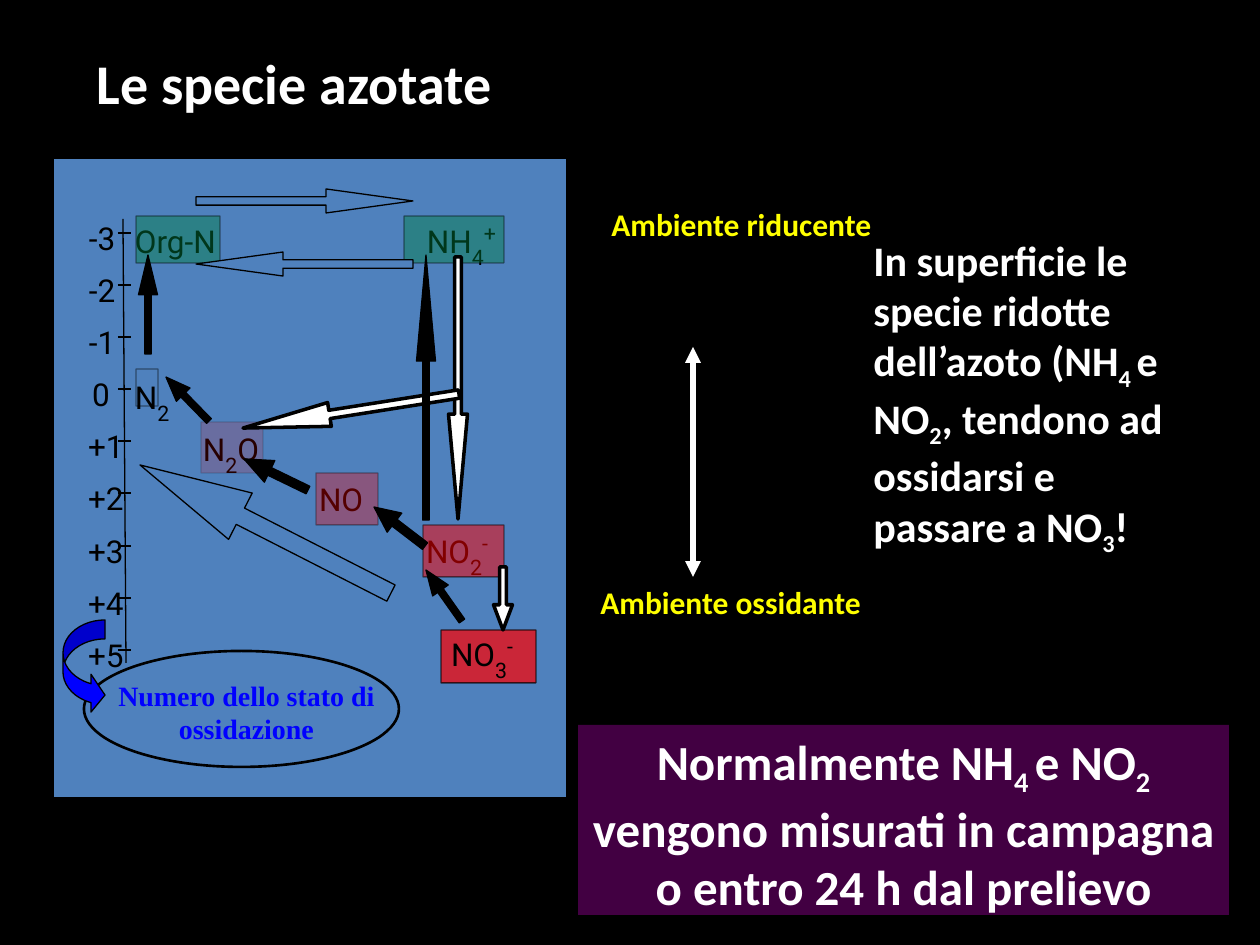
import math

from lxml import etree
from pptx import Presentation, util as u
from pptx.dml.color import RGBColor
from pptx.enum import shapes, text
from pptx.oxml.ns import qn

PX = 914400 / 126  # EMU per px
COLOURS = {
    "black": "000000", "white": "FFFFFF", "panel": "4F81BD", "green": "00803F",
    "red": "FF0000", "blue": "0000FF", "yellow": "FFFF00", "purple": "800080",
}
SUB, SUPER = -33, 33


def px(*lengths):
    return [u.Emu(round(n * PX)) for n in lengths]


def rgb(colour):
    return RGBColor.from_string(COLOURS[colour])


def set_alpha(fill_parent, percent):
    colour = fill_parent.find(".//" + qn("a:srgbClr"))
    etree.SubElement(colour, qn("a:alpha"), val=str(percent * 1000))


def add_outline(slide, kind, box, fill=None, line="black", weight=0.75, alpha=None):
    shape = slide.shapes.add_shape(kind, *px(*box))
    shape.shadow.inherit = False
    if fill:
        shape.fill.solid()
        shape.fill.fore_color.rgb = rgb(fill)
    else:
        shape.fill.background()
    if line:
        shape.line.color.rgb = rgb(line)
        shape.line.width = u.Pt(weight)
    else:
        shape.line.fill.background()
    if alpha:
        properties = shape._element.spPr
        if fill:
            set_alpha(properties.find(qn("a:solidFill")), alpha)
        if line:
            set_alpha(properties.find(qn("a:ln")), alpha)
    return shape


def add_line(slide, ends, colour="black", weight=0.75, arrows=False):
    line = slide.shapes.add_connector(shapes.MSO_CONNECTOR.STRAIGHT, *px(*ends))
    line.line.color.rgb = rgb(colour)
    line.line.width = u.Pt(weight)
    if arrows:
        for end in ("a:headEnd", "a:tailEnd"):
            etree.SubElement(line.line._get_or_add_ln(), qn(end), type="triangle")
    etree.SubElement(line._element.spPr, qn("a:effectLst"))


def add_block_arrow(slide, tail, tip, width, fill, weight=0.75):
    """Block arrow whose head takes 40% of its length."""
    dx, dy = tip[0] - tail[0], tip[1] - tail[1]
    length = math.hypot(dx, dy)
    left = (tail[0] + tip[0] - length) / 2
    top = (tail[1] + tip[1] - width) / 2
    arrow = add_outline(slide, shapes.MSO_SHAPE.RIGHT_ARROW,
                        (left, top, length, width), fill, weight=weight)
    arrow.adjustments[0] = 0.35
    arrow.adjustments[1] = 0.4 * length / width
    arrow.rotation = math.degrees(math.atan2(dy, dx)) % 360


def write(shape, runs, size, colour, font="Calibri", bold=True, align="LEFT",
          script_size=None, wrap=True):
    """Fill a shape with one paragraph; each run is (words, baseline percent)."""
    frame = shape.text_frame
    frame.word_wrap = wrap
    frame.vertical_anchor = text.MSO_ANCHOR.TOP
    paragraph = frame.paragraphs[0]
    paragraph.alignment = getattr(text.PP_ALIGN, align)
    paragraph.font.name = font
    paragraph.font.size = u.Pt(size)
    paragraph.font.bold = bold
    paragraph.font.color.rgb = rgb(colour)
    for words, baseline in runs:
        run = paragraph.add_run()
        run.text = words
        if baseline:
            run.font._element.set("baseline", str(baseline * 1000))
            if script_size:
                run.font.size = u.Pt(script_size)


def add_text(slide, box, runs, size, colour, **style):
    write(slide.shapes.add_textbox(*px(*box)), runs, size, colour, **style)


def add_diagram_label(slide, x, y, width, runs):
    label = slide.shapes.add_textbox(*px(x, y, width, 39))
    frame = label.text_frame
    frame.margin_left = frame.margin_right = frame.margin_top = frame.margin_bottom = 0
    write(label, runs, 18, "black", font="Roboto", bold=False, script_size=21, wrap=False)


def add_oxidation_scale(slide):
    add_line(slide, (123, 219, 126, 663))
    for step, state in enumerate(range(-3, 6)):
        offset = round(52.1 * step)
        x, width = (88, 42) if state > 0 else (89, 33) if state else (92, 21)
        number = f"{state:+d}" if state else "0"
        add_diagram_label(slide, x, 219 + offset, width, [(number, 0)])
        add_line(slide, (118, 233 + offset, 131, 233 + offset))


def add_species(slide):
    # label position and width, runs, box, box fill, opacity, box in front of label
    species = [
        ((451, 630, 71), [("NO", 0), ("3", SUB), ("-", SUPER)],
         (441, 630, 95, 53), "red", 70, False),
        ((135, 373, 39), [("N", 0), ("2", SUB)], (136, 369, 22, 37), None, 43, False),
        ((135, 222, 88), [("Org-N", 0)], (136, 216, 84, 47), "green", 43, True),
        ((427, 217, 77), [("NH", 0), ("4", SUB), ("+", SUPER)],
         (404, 216, 100, 47), "green", 43, True),
        ((203, 425, 62), [("N", 0), ("2", SUB), ("O", 0)],
         (201, 422, 62, 51), "red", 15, True),
        ((319, 480, 45), [("NO", 0)], (316, 473, 62, 52), "red", 33, True),
        ((426, 527, 71), [("NO", 0), ("2", SUB), ("-", SUPER)],
         (423, 525, 81, 52), "red", 51, True),
    ]
    for label, runs, box, fill, alpha, box_in_front in species:
        if box_in_front:
            add_diagram_label(slide, *label, runs)
        add_outline(slide, shapes.MSO_SHAPE.RECTANGLE, box, fill, alpha=alpha)
        if not box_in_front:
            add_diagram_label(slide, *label, runs)


def add_reactions(slide):
    reactions = [  # tail, tip, width, fill, line weight
        ((196, 201), (413, 201), 24, "panel", 0.75),
        ((413, 264), (196, 264), 24, "panel", 0.75),
        ((458, 257), (458, 519), 19, "white", 2),
        ((503, 567), (503, 630), 19, "white", 2),
        ((462, 621), (426, 570), 19, "black", 0.75),
        ((425, 546), (374, 507), 24, "black", 0.75),
        ((308, 490), (244, 459), 24, "black", 0.75),
        ((209, 421), (166, 377), 19, "black", 0.75),
        ((148, 354), (148, 255), 19, "black", 0.75),
        ((459, 394), (243, 428), 24, "white", 2),
        ((426, 520), (426, 255), 19, "black", 0.75),
        ((391, 593), (140, 465), 52, "panel", 0.75),
    ]
    for reaction in reactions:
        add_block_arrow(slide, *reaction)


def add_scale_caption(slide):
    add_text(slide, (94, 672, 305, 81), [("Numero dello stato di ossidazione", 0)],
             16, "blue", font="Times New Roman", align="CENTER")
    add_outline(slide, shapes.MSO_SHAPE.OVAL, (84, 651, 315, 116), weight=1.5)
    pointer = add_outline(slide, shapes.MSO_SHAPE.CURVED_RIGHT_ARROW,
                          (63, 620, 42, 94), "blue")
    for index, value in enumerate((0.45, 0.9, 0.333)):
        pointer.adjustments[index] = value


def main():
    deck = Presentation()
    deck.slide_width, deck.slide_height = px(1260, 945)
    slide = deck.slides.add_slide(deck.slide_layouts[5])
    slide.background.fill.solid()
    slide.background.fill.fore_color.rgb = rgb("black")

    # Title
    title = slide.shapes.title
    title.left, title.top, title.width, title.height = px(84, 42, 546, 81)
    write(title, [("Le specie azotate", 0)], 32, "white")

    # Nitrogen diagram
    add_outline(slide, shapes.MSO_SHAPE.RECTANGLE, (53, 158, 514, 640), "panel")
    add_oxidation_scale(slide)
    add_species(slide)
    add_reactions(slide)
    add_scale_caption(slide)

    # Reducing to oxidising environment
    add_text(slide, (588, 577, 294, 130), [("Ambiente ossidante", 0)], 18, "yellow")
    add_text(slide, (599, 199, 294, 130), [("Ambiente riducente", 0)], 18, "yellow")
    add_line(slide, (693, 347, 693, 577), "white", 3, arrows=True)

    # Remarks
    add_text(slide, (861, 228, 347, 318),
             [("In superficie le specie ridotte dell’azoto (NH", 0), ("4 ", -25),
              ("e NO", 0), ("2", -25), (", tendono ad ossidarsi e passare a NO", 0),
              ("3", -25), ("!", 0)], 24, "white")
    advice = add_outline(slide, shapes.MSO_SHAPE.RECTANGLE, (578, 725, 651, 190),
                         "purple", line=None, alpha=52)
    write(advice, [("Normalmente NH", 0), ("4 ", -25), ("e NO", 0), ("2 ", -25),
                   ("vengono misurati in campagna o entro 24 h dal prelievo", 0)],
          28, "white", align="CENTER")

    deck.save("out.pptx")


if __name__ == "__main__":
    main()
